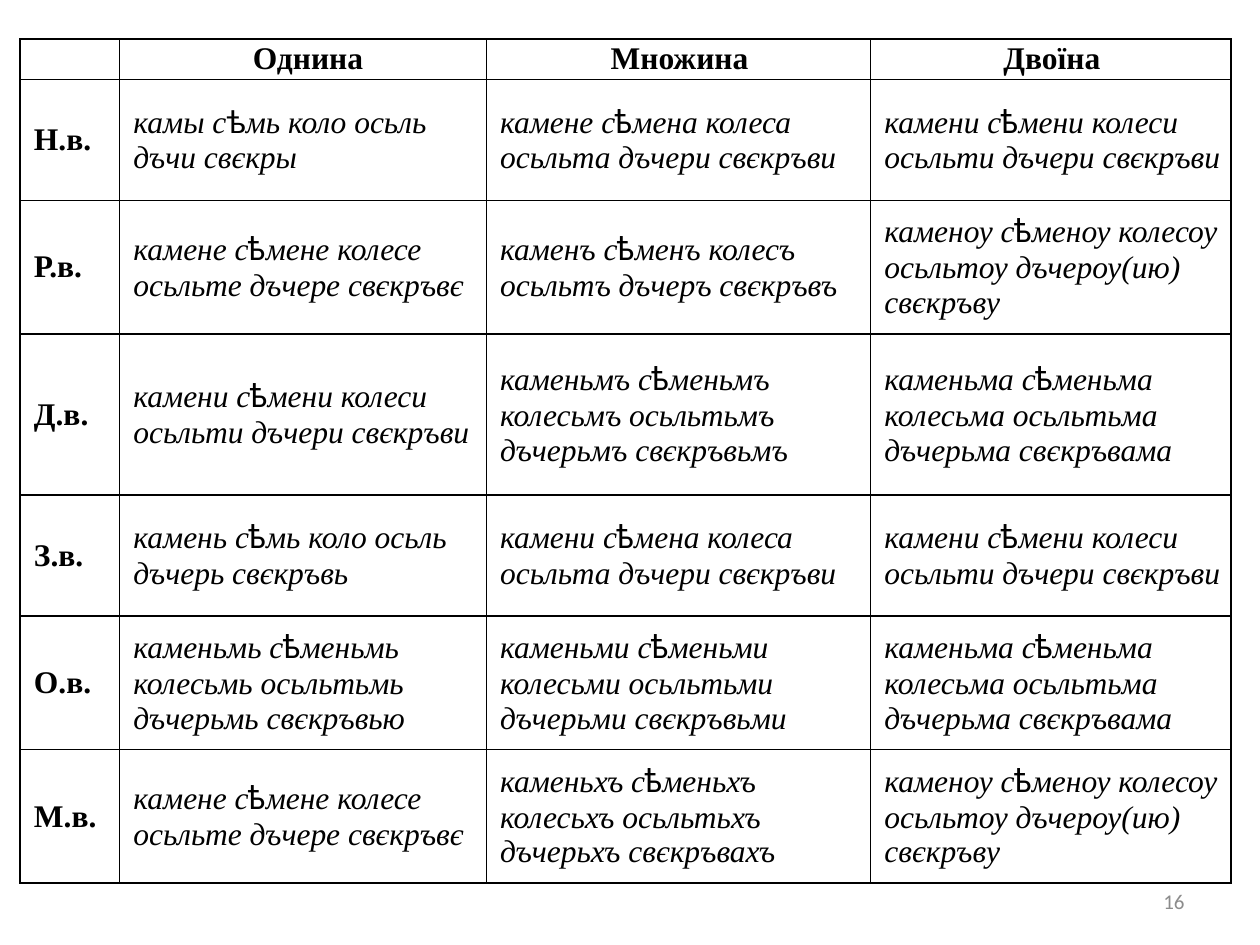
from pptx import Presentation
from pptx.dml.color import RGBColor
from pptx.enum.text import MSO_ANCHOR as Anchor, PP_ALIGN as Align
from pptx.oxml import parse_xml
from pptx.oxml.ns import nsdecls
from pptx.util import Inches, Pt

BLACK = RGBColor(0, 0, 0)
GRAY = RGBColor(0x8C, 0x8C, 0x8C)
SERIF = "Times New Roman"
YAT = "ѣ"

HEADS = ["", "Однина", "Множина ", "Двоїна "]
CASES = [
    ("Н.в.", "камы сѣмь коло осьль дъчи свєкры",
     "камене сѣмена колеса осьльта дъчери свєкръви",
     "камени сѣмени колеси осьльти дъчери свєкръви"),
    ("Р.в.", "камене сѣмене колесе осьльте дъчере свєкръвє",
     "каменъ сѣменъ колесъ осьльтъ дъчеръ свєкръвъ",
     "каменоу сѣменоу колесоу осьльтоу дъчероу(ию) свєкръву"),
    ("Д.в.", "камени сѣмени колеси осьльти дъчери свєкръви",
     "каменьмъ сѣменьмъ колесьмъ осьльтьмъ дъчерьмъ свєкръвьмъ",
     "каменьма сѣменьма колесьма осьльтьма дъчерьма свєкръвама"),
    ("З.в.", "камень сѣмь коло осьль дъчерь свєкръвь",
     "камени сѣмена колеса осьльта дъчери свєкръви",
     "камени сѣмени колеси осьльти дъчери свєкръви"),
    ("О.в.", "каменьмь сѣменьмь колесьмь осьльтьмь дъчерьмь свєкръвью",
     "каменьми сѣменьми колесьми осьльтьми дъчерьми свєкръвьми",
     "каменьма сѣменьма колесьма осьльтьма дъчерьма свєкръвама"),
    ("М.в.", "камене сѣмене колесе осьльте дъчере свєкръвє",
     "каменьхъ сѣменьхъ колесьхъ осьльтьхъ дъчерьхъ свєкръвахъ",
     "каменоу сѣменоу колесоу осьльтоу дъчероу(ию) свєкръву"),
]
WIDTHS = [0.79, 2.91, 3.05, 2.86]
HEIGHTS = [0.32, 0.96, 1.06, 1.28, 0.96, 1.06, 1.06]


def set_font(font, name, size, color, bold=False, italic=False):
    font.name, font.size = name, Pt(size)
    font.bold, font.italic = bold, italic
    font.color.rgb = color


def add_lines(cell):
    props = cell._tc.get_or_add_tcPr()
    for pos, side in enumerate(("lnL", "lnR", "lnT", "lnB")):
        props.insert(pos, parse_xml(
            f'<a:{side} {nsdecls("a")} w="12700"><a:solidFill>'
            f'<a:srgbClr val="{BLACK}"/></a:solidFill></a:{side}>'))


def add_forms(para, text, yat):
    start, end = text.split(YAT)
    for part in (start, YAT, end):
        run = para.add_run()
        run.text = part
        name = yat if part == YAT else SERIF
        set_font(run.font, name, 18, BLACK, italic=part != YAT)


def fill_cell(cell, text, row, col):
    cell.fill.background()
    add_lines(cell)
    cell.vertical_anchor = Anchor.MIDDLE
    cell.margin_left = cell.margin_right = Inches(0.03)
    cell.margin_top = cell.margin_bottom = 0
    para = cell.text_frame.paragraphs[0]
    props = para._p.get_or_add_pPr()
    props.set("marL", str(Inches(0.08)))
    props.set("indent", "0")
    para.alignment = Align.LEFT if row else Align.CENTER
    if YAT in text:
        add_forms(para, text, "Arial" if (row, col) == (1, 1) else "Roboto")
    else:
        para.text = text
        set_font(para.font, SERIF, 18, BLACK, bold=True)


def add_grid(slide):
    rows = [HEADS, *CASES]
    table = slide.shapes.add_table(
        len(rows), len(HEADS), Inches(0.16), Inches(0.31),
        Inches(sum(WIDTHS)), Inches(sum(HEIGHTS))).table
    table.first_row = table.horz_banding = False
    for col, width in zip(table.columns, WIDTHS):
        col.width = Inches(width)
    for row, height in zip(table.rows, HEIGHTS):
        row.height = Inches(height)
    for r, texts in enumerate(rows):
        for c, text in enumerate(texts):
            fill_cell(table.cell(r, c), text, r, c)


def add_page(slide):
    frame = slide.shapes.add_textbox(
        Inches(7.17), Inches(6.95), Inches(2.33), Inches(0.4)).text_frame
    frame.word_wrap = True
    frame.vertical_anchor = Anchor.MIDDLE
    para = frame.paragraphs[0]
    para.text = "16"
    para.alignment = Align.RIGHT
    set_font(para.font, "Calibri", 12, GRAY)


def main():
    deck = Presentation()
    deck.slide_width, deck.slide_height = Inches(10), Inches(7.5)
    slide = deck.slides.add_slide(deck.slide_layouts[6])
    add_page(slide)
    add_grid(slide)
    deck.save("out.pptx")


if __name__ == "__main__":
    main()
